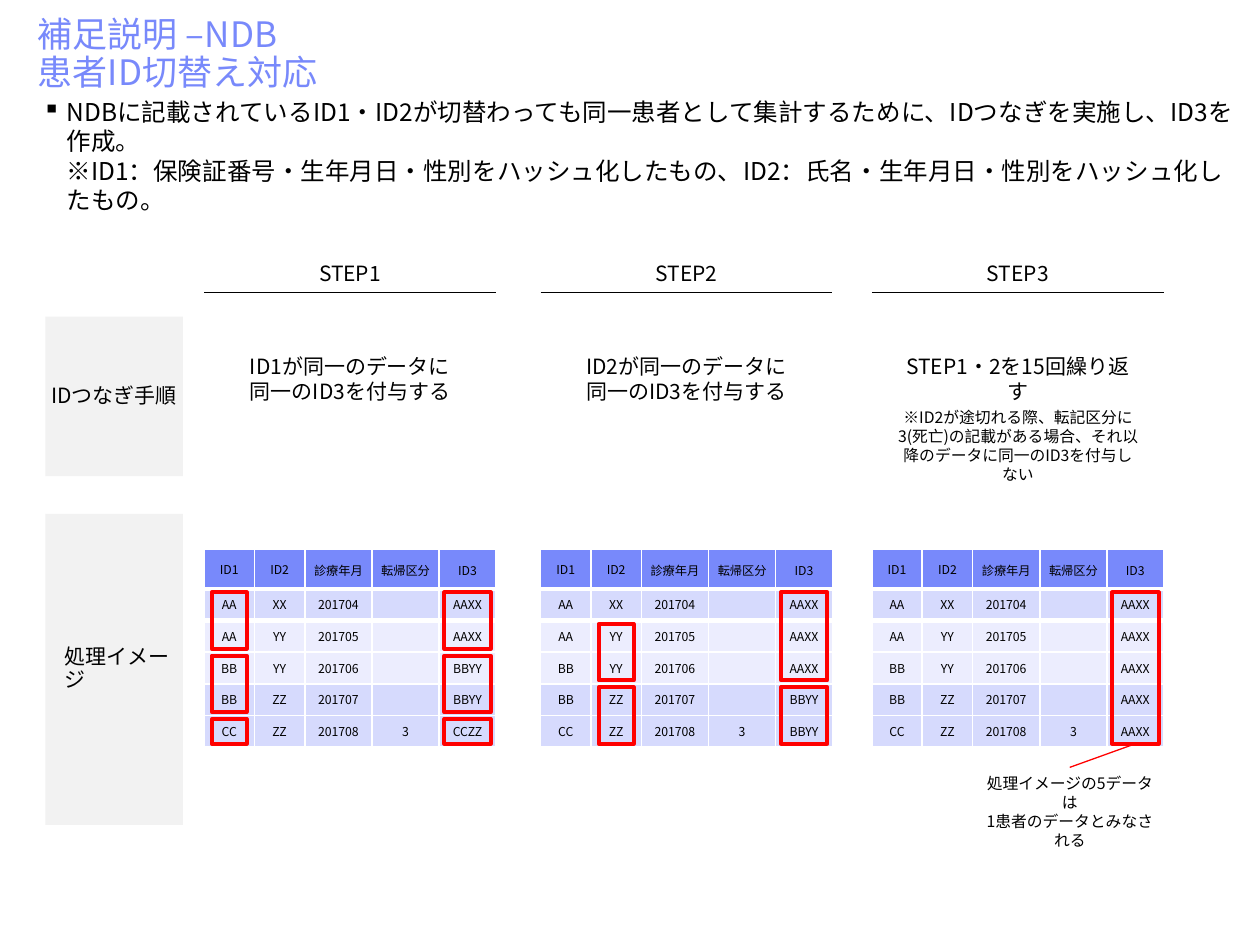
import lxml.etree
import pptx
import pptx.dml.color
import pptx.enum.shapes
import pptx.enum.text
import pptx.oxml.ns
import pptx.util

Pt = pptx.util.Pt
RGBColor = pptx.dml.color.RGBColor
PP_ALIGN = pptx.enum.text.PP_ALIGN
MSO_ANCHOR = pptx.enum.text.MSO_ANCHOR
MSO_AUTO_SIZE = pptx.enum.text.MSO_AUTO_SIZE
RECTANGLE = pptx.enum.shapes.MSO_SHAPE.RECTANGLE
STRAIGHT = pptx.enum.shapes.MSO_CONNECTOR.STRAIGHT
qn = pptx.oxml.ns.qn

FONT = "Noto Sans CJK JP"
BLACK = RGBColor(0x00, 0x00, 0x00)
RED = RGBColor(0xFF, 0x00, 0x00)
PERIWINKLE = RGBColor(0x78, 0x89, 0xFB)
GRAY = RGBColor(0xF2, 0xF2, 0xF2)
BAND_DARK = RGBColor(0xD6, 0xDA, 0xFD)
BAND_LIGHT = RGBColor(0xEC, 0xED, 0xFE)

COLUMN_WIDTHS = [28.8, 28.8, 38.4, 38.4, 32.4]
TABLE_WIDTH = sum(COLUMN_WIDTHS)
TABLE_TOP = 314
HEADER_HEIGHT = 22.5
ROW_HEIGHT = 18.1
HEADERS = ["ID1", "ID2", "診療年月", "転帰区分", "ID3"]
RECORDS = [
    ["AA", "XX", "201704", ""],
    ["AA", "YY", "201705", ""],
    ["BB", "YY", "201706", ""],
    ["BB", "ZZ", "201707", ""],
    ["CC", "ZZ", "201708", "3"],
]
ROW_FILLS = [PERIWINKLE, BAND_DARK, BAND_LIGHT, BAND_LIGHT, BAND_DARK, BAND_DARK]
FRAME_WIDTHS = {0: 20, 1: 20, 4: 26.6}

# (left, heading, procedure, procedure width, ID3 values, frames as column, first row, row count)
STEPS = [
    (116.6, "STEP1", "ID1が同一のデータに\n同一のID3を付与する", 133.2,
     ["AAXX", "AAXX", "BBYY", "BBYY", "CCZZ"],
     [(0, 0, 2), (0, 2, 2), (0, 4, 1), (4, 0, 2), (4, 2, 2), (4, 4, 1)]),
    (308.9, "STEP2", "ID2が同一のデータに\n同一のID3を付与する", 133.2,
     ["AAXX", "AAXX", "AAXX", "BBYY", "BBYY"],
     [(1, 1, 2), (1, 3, 2), (4, 0, 3), (4, 3, 2)]),
    (498.2, "STEP3", "STEP1・2を15回繰り返す", 146.2,
     ["AAXX"] * 5, [(4, 0, 5)]),
]


def write(text_frame, text, size, color=BLACK, align=PP_ALIGN.CENTER):
    text_frame.word_wrap = True
    paragraph = text_frame.paragraphs[0]
    paragraph.text = text
    paragraph.alignment = align
    paragraph.font.size = Pt(size)
    paragraph.font.name = FONT
    paragraph.font.color.rgb = color
    east_asian = lxml.etree.SubElement(paragraph._p.pPr.find(qn("a:defRPr")), qn("a:ea"))
    east_asian.set("typeface", FONT)
    return paragraph


def add_line(start_x, start_y, end_x, end_y, color):
    line = slide.shapes.add_connector(STRAIGHT, Pt(start_x), Pt(start_y), Pt(end_x), Pt(end_y))
    line.line.color.rgb = color
    line.line.width = Pt(0.75)
    lxml.etree.SubElement(line._element.spPr, qn("a:effectLst"))
    return line


presentation = pptx.Presentation()
presentation.slide_width = Pt(720)
presentation.slide_height = Pt(540)
slide = presentation.slides.add_slide(presentation.slide_layouts[5])

title = slide.shapes.title
title.left, title.top, title.width, title.height = Pt(14.4), Pt(6.5), Pt(684), Pt(40.3)
title.text_frame.auto_size = MSO_AUTO_SIZE.NONE
title.text_frame.vertical_anchor = MSO_ANCHOR.TOP
paragraph = write(title.text_frame, "補足説明 –NDB\n患者ID切替え対応", 20, PERIWINKLE, PP_ALIGN.LEFT)
paragraph.line_spacing = 0.9

summary = slide.shapes.add_textbox(Pt(17.3), Pt(51.8), Pt(698.4), Pt(56.9))
properties = summary.text_frame.paragraphs[0]._p.get_or_add_pPr()
properties.set("marL", str(Pt(13.7)))
properties.set("indent", str(Pt(-13.7)))
bullet_color = lxml.etree.SubElement(properties, qn("a:buClr"))
lxml.etree.SubElement(bullet_color, qn("a:srgbClr")).set("val", str(BLACK))
lxml.etree.SubElement(properties, qn("a:buChar")).set("char", "▪")
write(summary.text_frame,
      "NDBに記載されているID1・ID2が切替わっても同一患者として集計するために、IDつなぎを実施し、ID3を作成。\n"
      "※ID1：保険証番号・生年月日・性別をハッシュ化したもの、ID2：氏名・生年月日・性別をハッシュ化したもの。",
      14, align=PP_ALIGN.LEFT)

for text, top, height, align, indent in [
    ("IDつなぎ手順", 180.9, 91.2, PP_ALIGN.CENTER, 0),
    ("処理イメージ", 293.6, 177.8, PP_ALIGN.LEFT, 10.8),
]:
    label = slide.shapes.add_shape(RECTANGLE, Pt(25.9), Pt(top), Pt(78.6), Pt(height))
    label.shadow.inherit = False
    label.fill.solid()
    label.fill.fore_color.rgb = GRAY
    label.line.fill.background()
    frame = label.text_frame
    frame.margin_left = frame.margin_top = frame.margin_right = frame.margin_bottom = 0
    frame.vertical_anchor = MSO_ANCHOR.MIDDLE
    paragraph = write(frame, text, 12, align=align)
    paragraph.line_spacing = 0.9
    paragraph._p.pPr.set("marL", str(Pt(indent)))

for left, heading, procedure, procedure_width, id3_values, frames in STEPS:
    center = left + TABLE_WIDTH / 2
    heading_box = slide.shapes.add_textbox(Pt(center - 34.2), Pt(145.4), Pt(68.4), Pt(14.4))
    write(heading_box.text_frame, heading, 12)
    add_line(left, 167, left + TABLE_WIDTH, 167, BLACK)

    procedure_box = slide.shapes.add_textbox(
        Pt(center - procedure_width / 2), Pt(207.4), Pt(procedure_width), Pt(18))
    procedure_box.text_frame.vertical_anchor = MSO_ANCHOR.MIDDLE
    write(procedure_box.text_frame, procedure, 12)

    table = slide.shapes.add_table(
        6, 5, Pt(left), Pt(TABLE_TOP), Pt(TABLE_WIDTH), Pt(HEADER_HEIGHT + 5 * ROW_HEIGHT)).table
    table.first_row = False
    table.horz_banding = False
    for column, width in zip(table.columns, COLUMN_WIDTHS):
        column.width = Pt(width)
    rows = [HEADERS] + [record + [id3] for record, id3 in zip(RECORDS, id3_values)]
    for row_index, values in enumerate(rows):
        table.rows[row_index].height = Pt(ROW_HEIGHT if row_index else HEADER_HEIGHT)
        for column_index, value in enumerate(values):
            cell = table.cell(row_index, column_index)
            tight = row_index == 0 and column_index >= 2
            cell.margin_left = cell.margin_right = Pt(0.72 if tight else 5)
            cell.margin_top = Pt(0.72 if tight else 2.2)
            cell.margin_bottom = Pt(0 if tight else 2.2)
            cell.vertical_anchor = MSO_ANCHOR.MIDDLE
            cell.fill.solid()
            cell.fill.fore_color.rgb = ROW_FILLS[row_index]
            paragraph = write(cell.text_frame, value, 7)
            paragraph._p.get_or_add_endParaRPr().set("sz", "700")
            if row_index < 2:
                border = lxml.etree.Element(qn("a:lnT" if row_index else "a:lnB"), w=str(Pt(3)))
                border_fill = lxml.etree.SubElement(border, qn("a:solidFill"))
                lxml.etree.SubElement(border_fill, qn("a:srgbClr")).set("val", "FFFFFF")
                cell._tc.tcPr.insert(0, border)

    for column_index, first_row, row_count in frames:
        width = FRAME_WIDTHS[column_index]
        column_center = left + sum(COLUMN_WIDTHS[:column_index]) + COLUMN_WIDTHS[column_index] / 2
        highlight = slide.shapes.add_shape(
            RECTANGLE, Pt(column_center - width / 2),
            Pt(TABLE_TOP + HEADER_HEIGHT + first_row * ROW_HEIGHT + 2),
            Pt(width), Pt(row_count * ROW_HEIGHT - 4))
        highlight.shadow.inherit = False
        highlight.fill.background()
        highlight.line.color.rgb = RED
        highlight.line.width = Pt(2.25)

notes = []
for text, left, top, width, height in [
    ("※ID2が途切れる際、転記区分に\n3(死亡)の記載がある場合、それ以降のデータに同一のID3を付与しない",
     505.4, 229.7, 152.6, 40.3),
    ("処理イメージの5データは\n1患者のデータとみなされる", 556.6, 438.5, 109.4, 28.8),
]:
    note = slide.shapes.add_textbox(Pt(left), Pt(top), Pt(width), Pt(height))
    write(note.text_frame, text, 9)
    note.text_frame.auto_size = MSO_AUTO_SIZE.SHAPE_TO_FIT_TEXT
    notes.append(note)

callout = add_line(649.4, 424.8, 611.3, 438.5, RED)
callout.begin_connect(highlight, 2)
callout.end_connect(notes[1], 0)

presentation.save("out.pptx")
